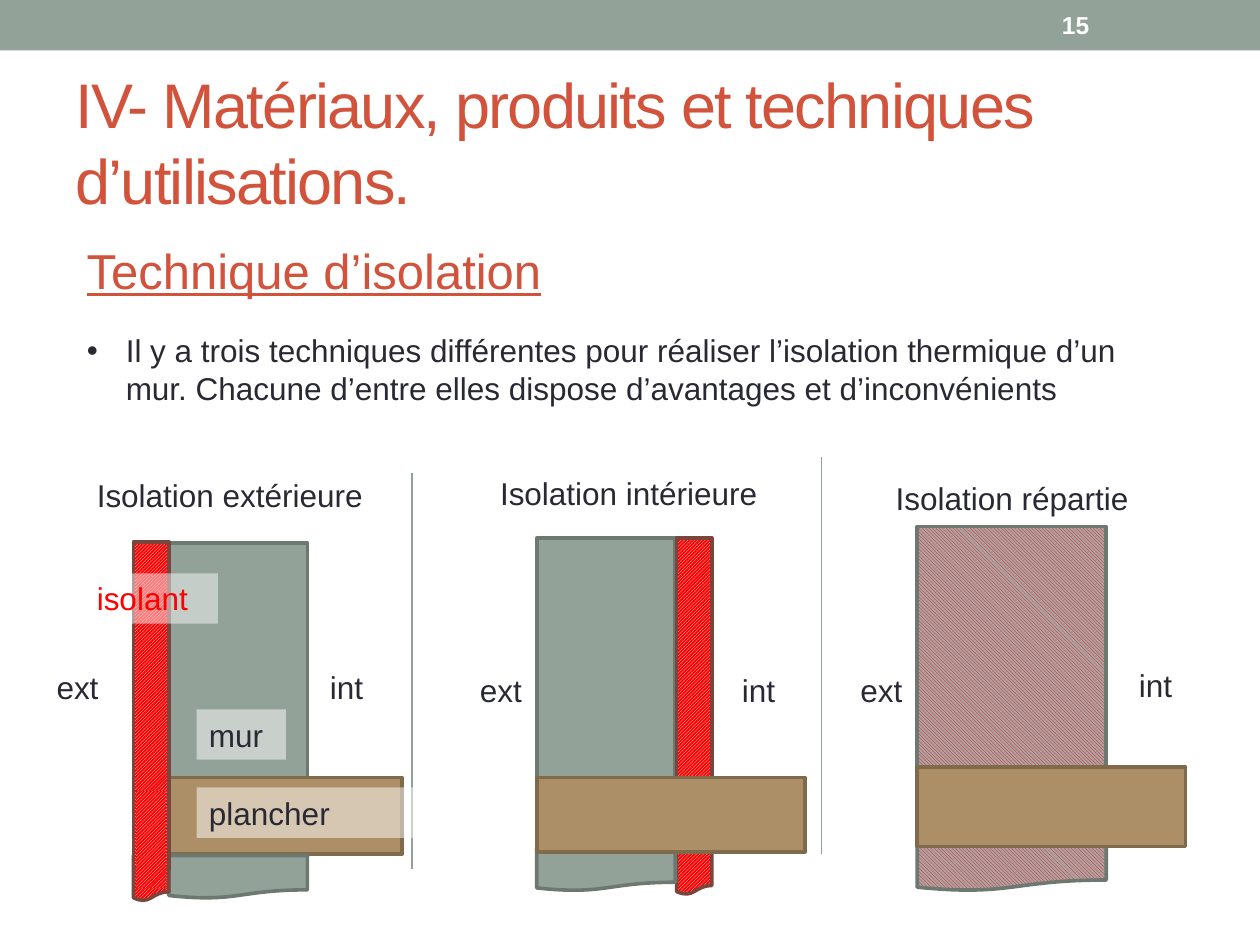
from pptx import Presentation
from pptx.dml.color import RGBColor
from pptx.enum.dml import MSO_PATTERN
from pptx.enum.shapes import MSO_CONNECTOR, MSO_SHAPE
from pptx.enum.text import MSO_ANCHOR, PP_ALIGN
from pptx.oxml.ns import qn
from pptx.util import Inches, Pt
from lxml import etree

SAGE, RUST, INK, WHITE, RED = "93A299", "D2533C", "292934", "FFFFFF", "FF0000"
RECT, TORN = MSO_SHAPE.RECTANGLE, MSO_SHAPE.FLOWCHART_DOCUMENT
UP, DOWN = MSO_PATTERN.LIGHT_UPWARD_DIAGONAL, MSO_PATTERN.LIGHT_DOWNWARD_DIAGONAL

# material: pattern, foreground, background, outline
MATERIALS = {
    "wall": (None, SAGE, None, "6D7871"),
    "floor": (None, "AD8F67", None, "806A4C"),
    "insulation": (UP, WHITE, RED, "79463D"),
    "seam": (UP, WHITE, RED, None),
    "mixed": (DOWN, RED, "A6A6A6", "6D7871"),
    "band": (None, SAGE, None, None),
}

deck = Presentation()
deck.slide_width, deck.slide_height = Inches(10), Inches(7.5)
page = deck.slides.add_slide(deck.slide_layouts[6])
rgb = RGBColor.from_string


def add_part(material, left, top, width, height, preset=RECT):
    pattern, front, back, outline = MATERIALS[material]
    part = page.shapes.add_shape(
        preset, Inches(left), Inches(top), Inches(width), Inches(height))
    part.shadow.inherit = False
    if pattern:
        part.fill.patterned()
        part.fill.pattern = pattern
        part.fill.fore_color.rgb = rgb(front)
        part.fill.back_color.rgb = rgb(back)
    else:
        part.fill.solid()
        part.fill.fore_color.rgb = rgb(front)
    if outline:
        part.line.color.rgb = rgb(outline)
        part.line.width = Pt(2.08)
    else:
        part.line.fill.background()


def add_text(text, left, top, width, height=0.4, color=INK, opacity=None,
             anchor=MSO_ANCHOR.TOP, wrap=True, **font):
    """Add a text box, on a translucent white ground when opacity (%) is given."""
    box = page.shapes.add_textbox(
        Inches(left), Inches(top), Inches(width), Inches(height))
    if opacity:
        box.fill.solid()
        box.fill.fore_color.rgb = rgb(WHITE)
        ground = box.fill._xPr.find(qn("a:solidFill"))[0]
        etree.SubElement(ground, qn("a:alpha")).set("val", str(opacity * 1000))
    box.text_frame.word_wrap = wrap
    box.text_frame.vertical_anchor = anchor
    para = box.text_frame.paragraphs[0]
    para.alignment = PP_ALIGN.LEFT
    span = para.add_run()
    span.text = text
    span.font.color.rgb = rgb(color)
    for name, value in {"name": "Arial", "size": Pt(18), **font}.items():
        setattr(span.font, name, value)
    return para


# Heading and introduction
add_part("band", 0, 0, 10, 0.4)
add_text("15", 8.33, 0.02, 1.17, 0.36, WHITE, anchor=MSO_ANCHOR.MIDDLE,
         size=Pt(14), bold=True)
title = add_text("IV- Matériaux, produits et techniques d’utilisations.",
                 0.5, 0.58, 9, 1.08, RUST, anchor=MSO_ANCHOR.MIDDLE, size=Pt(36))
title.runs[0].font._element.set("spc", "-100")
add_text("Technique d’isolation", 0.59, 1.86, 3.86, 0.57, RUST, wrap=False,
         size=Pt(28), underline=True)
intro = add_text(
    "Il y a trois techniques différentes pour réaliser l’isolation thermique d’un "
    "mur. Chacune d’entre elles dispose d’avantages et d’inconvénients",
    0.59, 2.58, 8.82, 0.71)
layout = intro._p.get_or_add_pPr()
layout.set("marL", str(Inches(0.31)))
layout.set("indent", str(Inches(-0.31)))
etree.SubElement(layout, qn("a:buFont")).set("typeface", "Arial")
etree.SubElement(layout, qn("a:buChar")).set("char", "•")

# Wall sections, from back to front
for part in [
    # exterior insulation
    ("wall", 1.34, 4.31, 1.1, 2.28),
    ("floor", 1.34, 6.17, 1.85, 0.61),
    ("wall", 1.34, 6.79, 1.1, 0.34, TORN),
    ("insulation", 1.06, 6.79, 0.28, 0.36, TORN),
    ("insulation", 1.06, 4.3, 0.28, 2.6),
    ("seam", 1.08, 6.28, 0.24, 0.77),
    # interior insulation
    ("insulation", 5.37, 6.74, 0.28, 0.36, TORN),
    ("wall", 4.26, 6.73, 1.1, 0.34, TORN),
    ("wall", 4.26, 4.27, 1.1, 2.28),
    ("insulation", 5.37, 4.27, 0.28, 2.28),
    ("floor", 4.26, 6.17, 2.13, 0.59),
    # distributed insulation
    ("mixed", 7.28, 6.64, 1.5, 0.43, TORN),
    ("mixed", 7.28, 4.18, 1.5, 2.28),
    ("floor", 7.28, 6.09, 2.13, 0.63),
]:
    add_part(*part)

# Dividers between the three techniques
for x, top in [(3.27, 3.75), (6.52, 3.63)]:
    divider = page.shapes.add_connector(
        MSO_CONNECTOR.STRAIGHT, Inches(x), Inches(top), Inches(x), Inches(top + 3.15))
    divider.line.color.rgb = rgb(SAGE)
    divider.line.width = Pt(0.75)
    etree.SubElement(divider._element.spPr, qn("a:effectLst"))

# Captions and labels
for label in [
    ("Isolation extérieure", 0.67, 3.73, 2.44),
    ("Isolation intérieure", 3.87, 3.71, 2.35),
    ("Isolation répartie", 7.01, 3.75, 2.56),
    ("ext", 0.35, 5.25, 0.55),
    ("int", 2.52, 5.25, 0.75),
    ("ext", 3.71, 5.28, 0.55),
    ("int", 5.79, 5.28, 0.75),
    ("ext", 6.73, 5.28, 0.55),
    ("int", 8.94, 5.24, 0.75),
]:
    add_text(*label)
add_text("mur", 1.56, 5.63, 0.71, opacity=50)
add_text("isolant", 0.67, 4.55, 1.06, color=RED, opacity=47)
add_text("plancher", 1.56, 6.25, 1.79, opacity=50)

deck.save("out.pptx")
